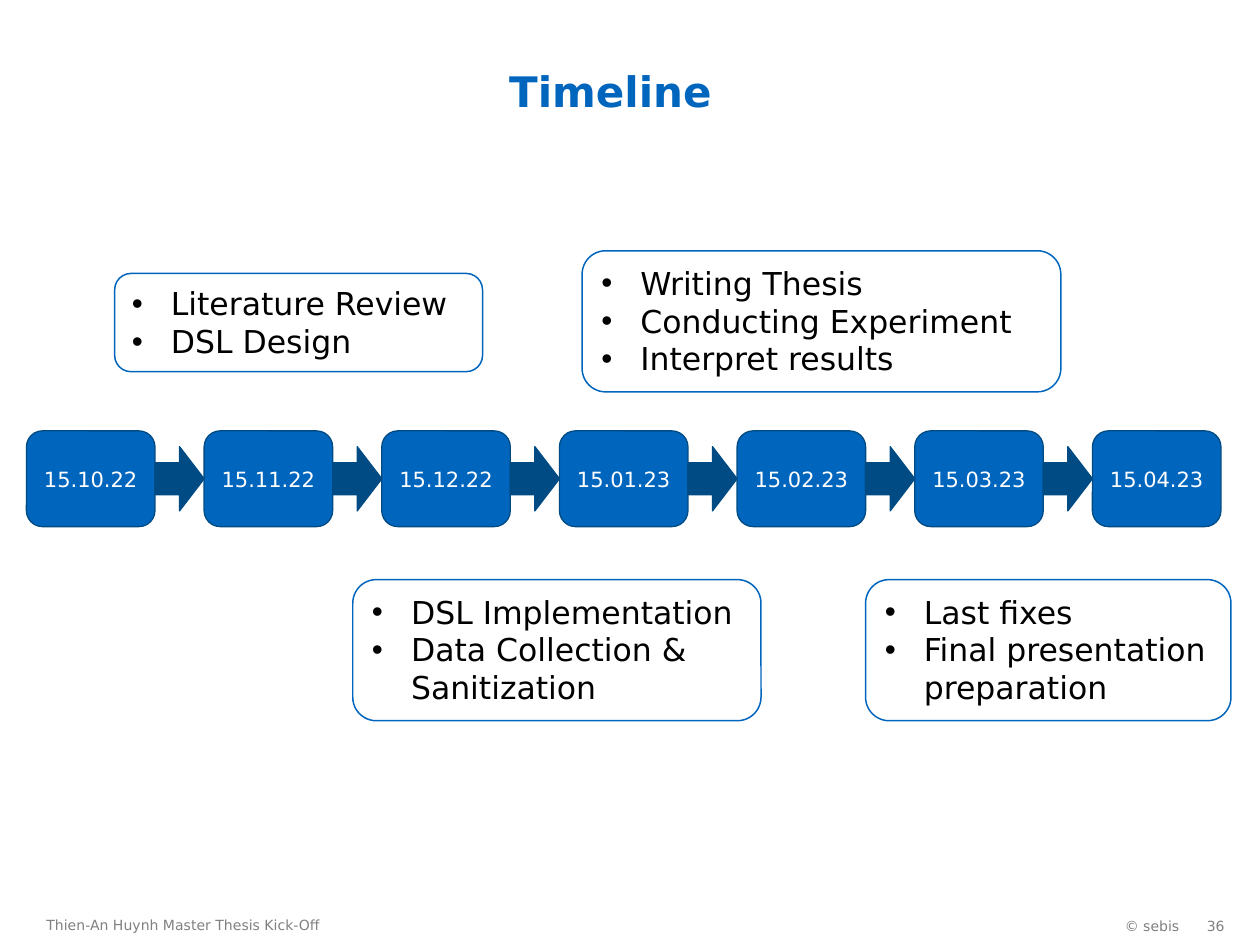
from lxml import etree
from pptx import Presentation
from pptx.dml.color import RGBColor
from pptx.enum.shapes import MSO_SHAPE
from pptx.enum.text import MSO_ANCHOR, MSO_AUTO_SIZE, PP_ALIGN
from pptx.oxml.ns import qn
from pptx.util import Inches, Pt

ROUNDED, ARROW = MSO_SHAPE.ROUNDED_RECTANGLE, MSO_SHAPE.RIGHT_ARROW
TOP, MIDDLE, BOTTOM = MSO_ANCHOR.TOP, MSO_ANCHOR.MIDDLE, MSO_ANCHOR.BOTTOM
LEFT, CENTER, RIGHT = PP_ALIGN.LEFT, PP_ALIGN.CENTER, PP_ALIGN.RIGHT
GROW = MSO_AUTO_SIZE.SHAPE_TO_FIT_TEXT

BLUE = RGBColor(0x00, 0x65, 0xBD)
DARK_BLUE = RGBColor(0x00, 0x4B, 0x83)
GRAY = RGBColor(0x80, 0x80, 0x80)
BLACK = RGBColor(0x00, 0x00, 0x00)
WHITE = RGBColor(0xFF, 0xFF, 0xFF)

FONT = "DejaVu Sans"
TITLE_FONT = {"name": FONT, "size": Pt(24), "bold": True}
DATE_FONT = {"name": FONT, "size": Pt(12)}
TASK_FONT = {"name": FONT, "size": Pt(18)}
FOOTER_FONT = {"name": FONT, "size": Pt(8)}

DATES = ["15.10.22", "15.11.22", "15.12.22", "15.01.23",
         "15.02.23", "15.03.23", "15.04.23"]
FIRST_DATE_LEFT, DATE_PITCH = 0.21, 1.41
DATE_TOP, DATE_WIDTH, DATE_HEIGHT = 3.42, 1.02, 0.76
ARROW_HEIGHT = 0.51

PHASES = [
    ((0.91, 2.17, 2.92, 0.78), ["Literature Review", "DSL Design"]),
    ((2.8, 4.6, 3.24, 1.12),
     ["DSL Implementation", "Data Collection & Sanitization"]),
    ((4.62, 1.99, 3.8, 1.12),
     ["Writing Thesis", "Conducting Experiment", "Interpret results"]),
    ((6.87, 4.6, 2.9, 1.12),
     ["Last fixes", "Final presentation preparation"]),
]

FOOTERS = [
    ("© sebis", (7.7, 7.19, 1.76, 0.32), RIGHT, {"word_wrap": False}),
    ("Thien-An Huynh Master Thesis Kick-Off", (0.27, 7.18, 4.73, 0.32), LEFT,
     {"word_wrap": True}),
    ("36", (9.45, 7.19, 0.27, 0.32), RIGHT,
     {"word_wrap": False, "margin_right": 0}),
]


def set_attributes(target, values):
    for name, value in values.items():
        setattr(target, name, value)


def format_paragraph(paragraph, font, color, alignment):
    paragraph.alignment = alignment
    set_attributes(paragraph.font, font)
    paragraph.font.color.rgb = color


def add_bullet(paragraph):
    properties = paragraph._p.get_or_add_pPr()
    properties.set("marL", str(Inches(0.31)))
    properties.set("indent", str(-Inches(0.31)))
    etree.SubElement(properties, qn("a:buFont"), typeface="Arial")
    etree.SubElement(properties, qn("a:buChar"), char="•")


def add_block(slide, preset, box, fill, line, line_width):
    block = slide.shapes.add_shape(preset, *map(Inches, box))
    block.shadow.inherit = False
    block.fill.solid()
    block.fill.fore_color.rgb = fill
    block.line.color.rgb = line
    block.line.width = Pt(line_width)
    return block


def add_title(slide, text):
    title = slide.shapes.title
    set_attributes(title, {"left": Inches(0.12), "top": Inches(0.28),
                           "width": Inches(9.45), "height": Inches(0.64)})
    frame = title.text_frame
    frame.text = text
    set_attributes(frame, {"vertical_anchor": BOTTOM,
                           "margin_top": 0, "margin_bottom": 0})
    format_paragraph(frame.paragraphs[0], TITLE_FONT, BLUE, CENTER)


def add_date(slide, left, date):
    box = (left, DATE_TOP, DATE_WIDTH, DATE_HEIGHT)
    frame = add_block(slide, ROUNDED, box, BLUE, DARK_BLUE, 0.75).text_frame
    frame.text = date
    frame.vertical_anchor = MIDDLE
    format_paragraph(frame.paragraphs[0], DATE_FONT, WHITE, CENTER)


def add_timeline(slide):
    """Place the dates at an even pitch, with an arrow filling each gap."""
    arrow_width = DATE_PITCH - DATE_WIDTH
    arrow_top = DATE_TOP + (DATE_HEIGHT - ARROW_HEIGHT) / 2
    for index, date in enumerate(DATES):
        left = FIRST_DATE_LEFT + index * DATE_PITCH
        add_date(slide, left, date)
        if index:
            arrow = (left - arrow_width, arrow_top, arrow_width, ARROW_HEIGHT)
            add_block(slide, ARROW, arrow, DARK_BLUE, DARK_BLUE, 0.75)


def add_phase(slide, box, tasks):
    frame = add_block(slide, ROUNDED, box, WHITE, BLUE, 0.85).text_frame
    frame.text = "\n".join(tasks)
    set_attributes(frame, {"vertical_anchor": TOP, "word_wrap": True,
                           "auto_size": GROW})
    for paragraph in frame.paragraphs:
        add_bullet(paragraph)
        format_paragraph(paragraph, TASK_FONT, BLACK, LEFT)


def add_footer(slide, text, box, alignment, frame_format):
    frame = slide.shapes.add_textbox(*map(Inches, box)).text_frame
    frame.text = text
    frame.vertical_anchor = MIDDLE
    set_attributes(frame, frame_format)
    format_paragraph(frame.paragraphs[0], FOOTER_FONT, GRAY, alignment)


def main():
    presentation = Presentation()
    presentation.slide_width = Inches(10)
    presentation.slide_height = Inches(7.5)
    title_only = presentation.slide_layouts[5]
    slide = presentation.slides.add_slide(title_only)

    for footer in FOOTERS:
        add_footer(slide, *footer)
    add_title(slide, "Timeline")
    add_timeline(slide)
    for box, tasks in PHASES:
        add_phase(slide, box, tasks)

    presentation.save("out.pptx")


if __name__ == "__main__":
    main()
